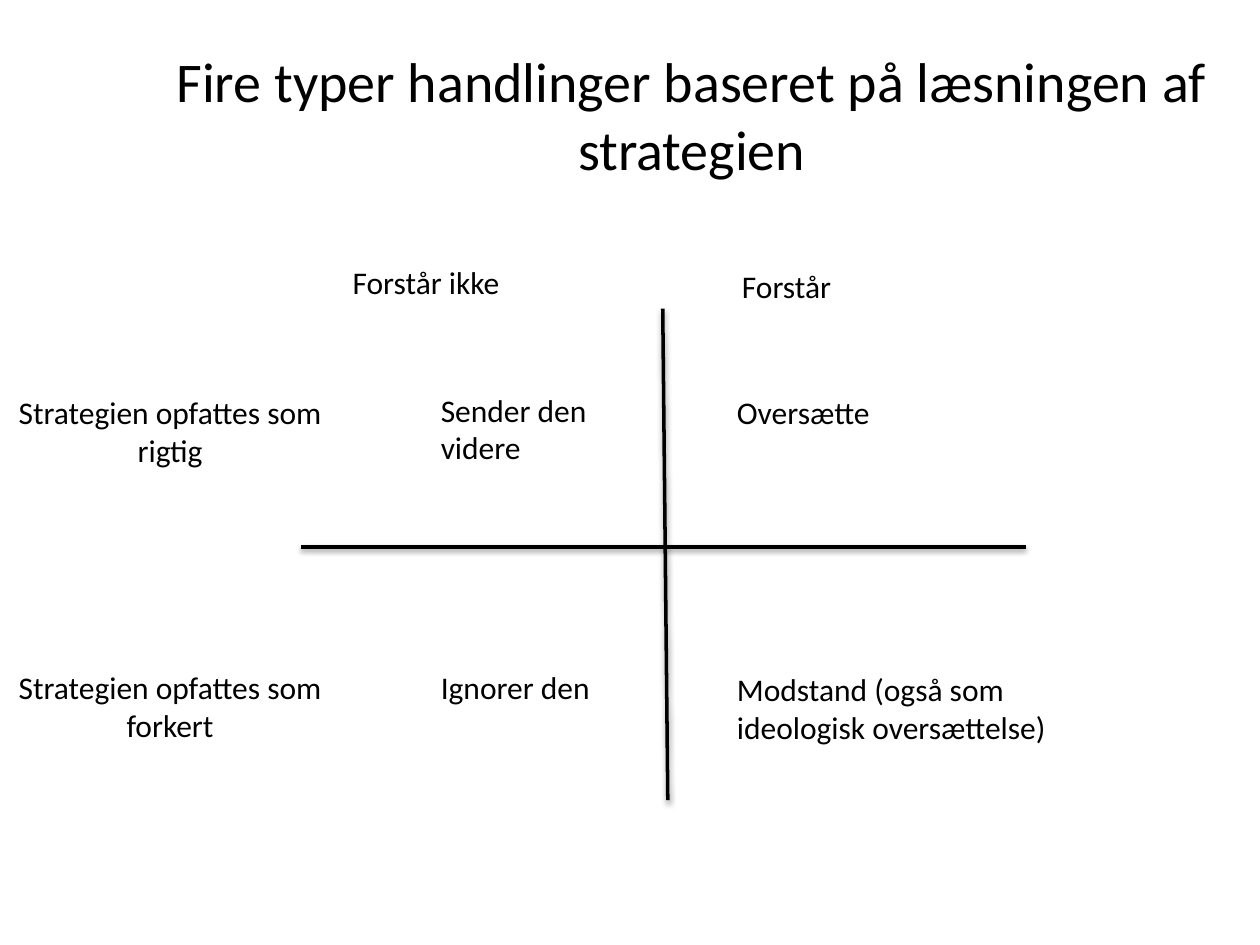
from lxml.etree import SubElement
from pptx import Presentation
from pptx.dml.color import RGBColor
from pptx.enum.shapes import MSO_CONNECTOR
from pptx.enum.text import MSO_ANCHOR, MSO_AUTO_SIZE, PP_ALIGN
from pptx.oxml.ns import qn
from pptx.util import Inches, Pt

WIDE, HIGH = 10, 7.5
FONT = "Calibri"
COLORS = {"ink": "000000", "back": "FFFFFF"}
TITLE = "Fire typer handlinger baseret på læsningen af strategien"

COLS = {"side": (0, 2.7), "head": (2.7, 2.7), "left": (3.4, 2.39),
        "next": (5.79, 2.7), "right": (5.75, 2.39), "wide": (5.75, 2.95)}
ROWS = {"head": 2.04, "top": 3.05, "low": 5.25}
NUDGE = 0.02
LINES = {1: 0.4, 2: 0.71}

LABELS = [
    ("Forstår ikke", "head", "head", 0, 1),
    ("Forstår", "next", "head", 1.5, 1),
    ("Strategien opfattes som rigtig", "side", "top", 1, 2),
    ("Strategien opfattes som forkert", "side", "low", 0, 2),
    ("Sender den\nvidere", "left", "top", 0, 2),
    ("Ignorer den", "left", "low", 0, 1),
    ("Oversætte", "right", "top", 1, 1),
    ("Modstand (også som ideologisk oversættelse)", "wide", "low", 1, 2),
]
AXES = [(5.26, 2.45, 5.3, 6.35), (2.39, 4.34, 8.14, 4.34)]


def ink(name):
    return RGBColor.from_string(COLORS[name])


def add_text(slide, text, spot, size, align):
    box = slide.shapes.add_textbox(*map(Inches, spot))
    frame = box.text_frame
    frame.word_wrap = True
    frame.text = text
    for para in frame.paragraphs:
        para.alignment = align
        for run in para.runs:
            run.font.name = FONT
            run.font.size = Pt(size)
            run.font.color.rgb = ink("ink")
    return frame


def add_axis(slide, ends):
    axis = slide.shapes.add_connector(MSO_CONNECTOR.STRAIGHT, *map(Inches, ends))
    axis.line.color.rgb = ink("ink")
    axis.line.width = Pt(2)
    props = axis.element.find(qn("p:spPr"))
    shade = SubElement(SubElement(props, qn("a:effectLst")), qn("a:outerShdw"),
                       blurRad="40000", dist="20000", dir="5400000", rotWithShape="0")
    tone = SubElement(shade, qn("a:srgbClr"), val=COLORS["ink"])
    SubElement(tone, qn("a:alpha"), val="38000")


def main():
    deck = Presentation()
    deck.slide_width, deck.slide_height = Inches(WIDE), Inches(HIGH)
    slide = deck.slides.add_slide(deck.slide_layouts[6])
    slide.background.fill.solid()
    slide.background.fill.fore_color.rgb = ink("back")

    title = add_text(slide, TITLE, (0.98, 0.28, 9.02, 1.25), 32, PP_ALIGN.CENTER)
    title.vertical_anchor = MSO_ANCHOR.MIDDLE
    for ends in AXES:
        add_axis(slide, ends)
    for text, col, row, drop, lines in LABELS:
        left, width = COLS[col]
        spot = left, ROWS[row] + drop * NUDGE, width, LINES[lines]
        align = PP_ALIGN.CENTER if col == "side" else PP_ALIGN.LEFT
        frame = add_text(slide, text, spot, 18, align)
        frame.auto_size = MSO_AUTO_SIZE.SHAPE_TO_FIT_TEXT
    deck.save("out.pptx")


if __name__ == "__main__":
    main()
